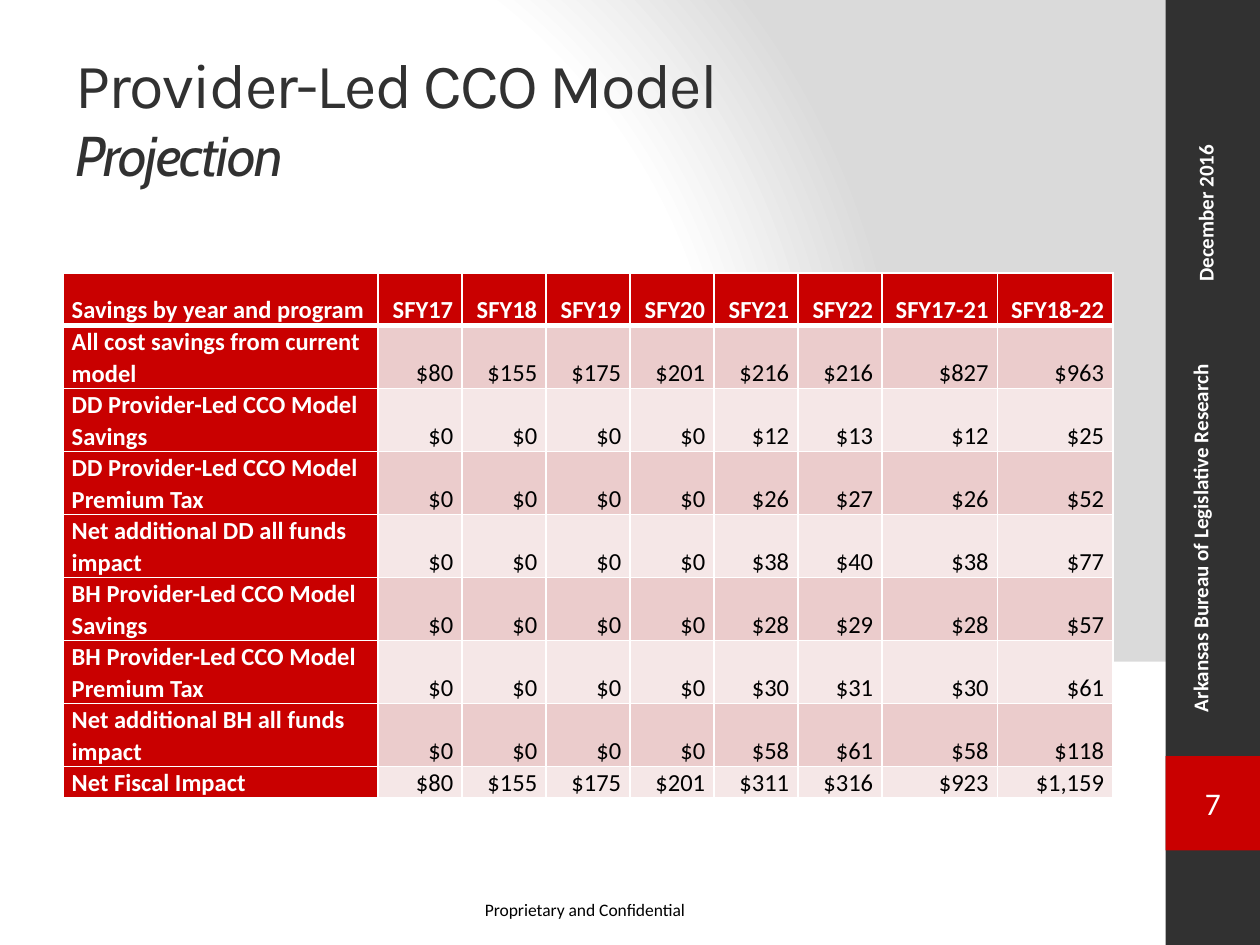
from dataclasses import dataclass

from pptx import Presentation
from pptx.dml.color import RGBColor as RGB
from pptx.enum.shapes import MSO_SHAPE as SHAPE
from pptx.enum.text import MSO_ANCHOR as ANCHOR, MSO_AUTO_SIZE as AUTOSIZE, PP_ALIGN as ALIGN
from pptx.oxml import parse_xml
from pptx.oxml.ns import nsdecls
from pptx.util import Pt


@dataclass(frozen=True)
class Theme:
    white: str = "FFFFFF"
    black: str = "000000"
    dark: str = "313131"
    red: str = "C90000"
    shade: str = "DADADA"
    bands: tuple = ("EBCCCC", "F5E7E7")
    body_font: str = "Calibri"
    title_font: str = "Karla"
    subtitle_font: str = "Cabin"
    title: int = 36
    subtitle: int = 32
    number: int = 18
    table: int = 14
    side: int = 12
    footer: int = 10


THEME = Theme()
YEARS = ["SFY17", "SFY18", "SFY19", "SFY20", "SFY21", "SFY22", "SFY17-21", "SFY18-22"]
SAVINGS = [
    ("All cost savings from current model", [80, 155, 175, 201, 216, 216, 827, 963]),
    ("DD Provider-Led CCO Model Savings", [0, 0, 0, 0, 12, 13, 12, 25]),
    ("DD Provider-Led CCO Model Premium Tax", [0, 0, 0, 0, 26, 27, 26, 52]),
    ("Net additional DD all funds impact", [0, 0, 0, 0, 38, 40, 38, 77]),
    ("BH Provider-Led CCO Model Savings", [0, 0, 0, 0, 28, 29, 28, 57]),
    ("BH Provider-Led CCO Model Premium Tax", [0, 0, 0, 0, 30, 31, 30, 61]),
    ("Net additional BH all funds impact", [0, 0, 0, 0, 58, 61, 58, 118]),
    ("Net Fiscal Impact", [80, 155, 175, 201, 311, 316, 923, 1159]),
]
COLUMN_WIDTHS = [180] + [48] * 6 + [66] * 2
ROW_HEIGHTS = [30] + [36] * 7 + [18]


def style_font(font, size, color, name=THEME.body_font, bold=None):
    font.size, font.name, font.bold = Pt(size), name, bold
    font.color.rgb = RGB.from_string(color)


def paint_background(slide):
    slide.background.fill.solid()
    plain = slide.element.xpath(".//p:bgPr/a:solidFill")[0]
    stops = "".join(
        f'<a:gs pos="{position * 1000}"><a:srgbClr val="{color}"/></a:gs>'
        for position, color in ((0, THEME.white), (75, THEME.white), (100, THEME.shade))
    )
    plain.getparent().replace(plain, parse_xml(
        f'<a:gradFill {nsdecls("a")} rotWithShape="1"><a:gsLst>{stops}</a:gsLst>'
        '<a:path path="circle"><a:fillToRect l="20000" t="50000" r="100000" b="50000"/>'
        '</a:path></a:gradFill>'))


def add_panel(slide, left, top, width, height, color):
    panel = slide.shapes.add_shape(SHAPE.RECTANGLE, Pt(left), Pt(top), Pt(width), Pt(height))
    panel.shadow.inherit = False
    panel.fill.solid()
    panel.fill.fore_color.rgb = RGB.from_string(color)
    panel.line.fill.background()
    return panel


def add_page_number(slide, number):
    frame = add_panel(slide, 666, 432, 54, 54, THEME.red).text_frame
    frame.text = number
    frame.vertical_anchor = ANCHOR.MIDDLE
    frame.paragraphs[0].alignment = ALIGN.CENTER
    style_font(frame.paragraphs[0].font, THEME.number, THEME.white)


def add_label(slide, left, top, width, height, text, size, color, upright=False):
    frame = slide.shapes.add_textbox(Pt(left), Pt(top), Pt(width), Pt(height)).text_frame
    frame.text = text
    frame.word_wrap = upright
    frame.auto_size = AUTOSIZE.SHAPE_TO_FIT_TEXT
    style_font(frame.paragraphs[0].font, size, color, bold=upright)
    if upright:
        frame._txBody.bodyPr.set("vert", "vert270")


def set_title(slide, heading, subheading):
    title = slide.shapes.title
    title.left, title.top, title.width, title.height = Pt(36), Pt(21.6), Pt(600), Pt(90)
    frame = title.text_frame
    frame.auto_size = AUTOSIZE.NONE
    frame.vertical_anchor = ANCHOR.MIDDLE
    line = frame.paragraphs[0]
    line.alignment = ALIGN.LEFT
    first = line.add_run()
    line.add_line_break()
    second = line.add_run()
    first.text, second.text = heading, subheading
    style_font(first.font, THEME.title, THEME.dark, THEME.title_font)
    style_font(second.font, THEME.subtitle, THEME.dark, THEME.subtitle_font)
    second.font.italic = True
    for run in (first, second):
        run.font._element.set("spc", "-100")


def set_borders(cell, top, bottom):
    properties = cell._tc.get_or_add_tcPr()
    sides = (("lnL", 1), ("lnR", 1), ("lnT", top), ("lnB", bottom))
    for position, (side, width) in enumerate(sides):
        properties.insert(position, parse_xml(
            f'<a:{side} {nsdecls("a")} w="{Pt(width)}"><a:solidFill>'
            f'<a:srgbClr val="{THEME.white}"/></a:solidFill></a:{side}>'))


def fill_cell(cell, text, row, column):
    accented = row == 0 or column == 0
    cell.text = text
    cell.vertical_anchor = ANCHOR.BOTTOM
    cell.margin_left = cell.margin_right = Pt(5)
    cell.margin_top = cell.margin_bottom = 0
    cell.fill.solid()
    cell.fill.fore_color.rgb = RGB.from_string(
        THEME.red if accented else THEME.bands[(row - 1) % 2])
    set_borders(cell, 3 if row == 1 else 1, 3 if row == 0 else 1)
    line = cell.text_frame.paragraphs[0]
    line.line_spacing = 1.07
    line.alignment = ALIGN.RIGHT if column else ALIGN.LEFT
    style_font(line.font, THEME.table, THEME.white if accented else THEME.black, bold=accented)


def add_savings_table(slide):
    rows = [["Savings by year and program"] + YEARS]
    rows += [[program] + [f"${amount:,}" for amount in amounts] for program, amounts in SAVINGS]
    table = slide.shapes.add_table(
        len(rows), len(rows[0]), Pt(36), Pt(156),
        Pt(sum(COLUMN_WIDTHS)), Pt(sum(ROW_HEIGHTS))).table
    table.first_col = True
    for column, width in zip(table.columns, COLUMN_WIDTHS):
        column.width = Pt(width)
    for row, height in zip(table.rows, ROW_HEIGHTS):
        row.height = Pt(height)
    for r, texts in enumerate(rows):
        for c, text in enumerate(texts):
            fill_cell(table.cell(r, c), text, r, c)


def main():
    deck = Presentation()
    deck.slide_width, deck.slide_height = Pt(720), Pt(540)
    slide = deck.slides.add_slide(deck.slide_layouts[5])
    paint_background(slide)
    add_panel(slide, 0, 378, 672, 162, THEME.white)
    add_panel(slide, 666, 0, 54, 540, THEME.dark)
    add_page_number(slide, "7")
    add_label(slide, 270, 510, 130, 19.4, "Proprietary and Confidential",
              THEME.footer, THEME.black)
    add_label(slide, 675, 162, 29, 252, "Arkansas Bureau of Legislative Research",
              THEME.side, THEME.white, upright=True)
    add_label(slide, 678, 36, 29, 132, "December 2016", THEME.side, THEME.white, upright=True)
    set_title(slide, "Provider-Led CCO Model", "Projection")
    add_savings_table(slide)
    deck.save("out.pptx")


if __name__ == "__main__":
    main()
